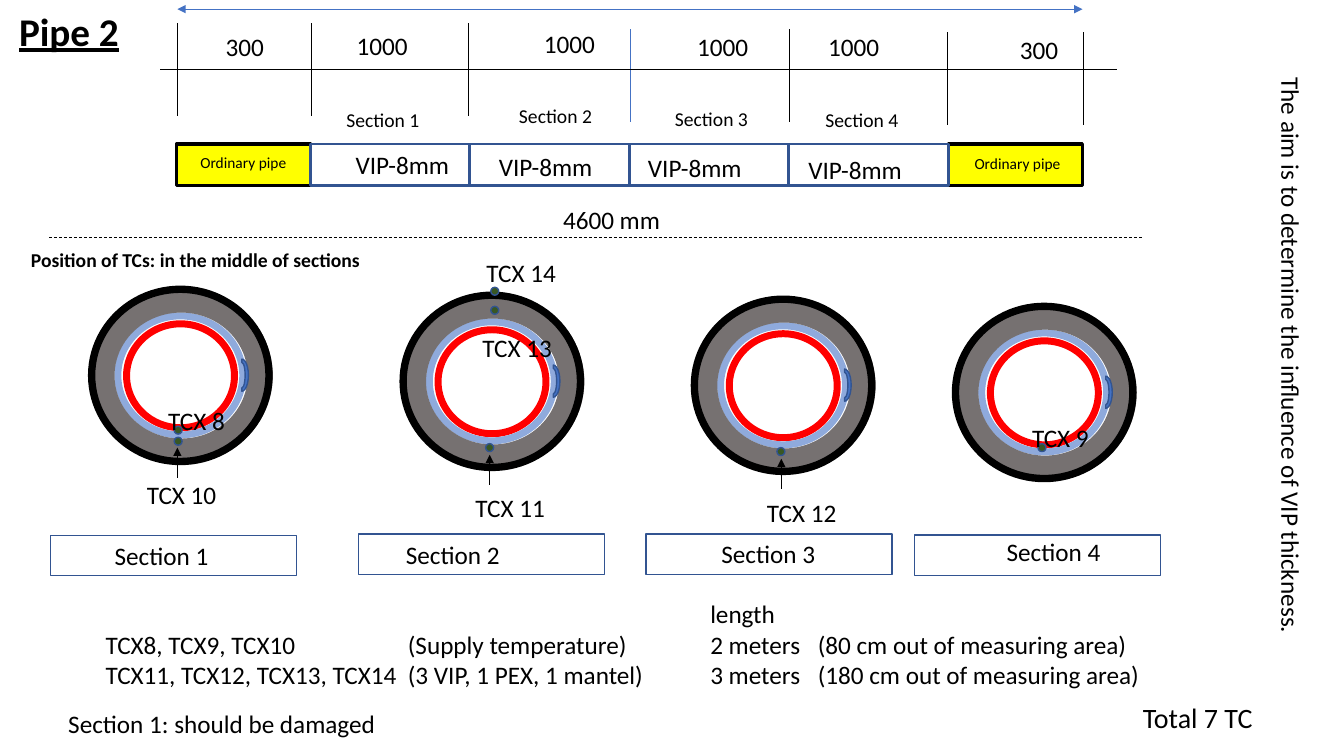
from dataclasses import dataclass, field
from typing import Any, NamedTuple, Optional

from lxml.etree import SubElement
from pptx import Presentation
from pptx.dml.color import RGBColor
from pptx.enum.dml import MSO_LINE
from pptx.enum.shapes import MSO_CONNECTOR, MSO_SHAPE
from pptx.enum.text import MSO_AUTO_SIZE
from pptx.oxml.ns import qn
from pptx.util import Cm, Pt


@dataclass(frozen=True)
class Theme:
    font: str = "Calibri"
    black: str = "000000"
    blue: str = "4472C4"
    navy: str = "325491"
    yellow: str = "FFFF00"
    green: str = "385723"
    red: str = "FF0000"
    pale_blue: str = "8FAADC"
    grey: str = "767171"
    title: int = 28
    total: int = 20
    body: int = 18
    small: int = 14
    tiny: int = 11


THEME = Theme()


class Label(NamedTuple):
    text: str
    left: float
    top: float
    width: float
    size: int = THEME.body
    format: dict[str, Any] = {}
    rotation: int = 0


class Figure(NamedTuple):
    left: float
    top: float
    width: float
    height: float
    line: str
    weight: float
    fill: Optional[str] = None
    kind: MSO_SHAPE = MSO_SHAPE.RECTANGLE
    rotation: int = 0


class Stroke(NamedTuple):
    start: tuple[float, float]
    end: tuple[float, float]
    color: str = THEME.black
    heads: tuple[str, ...] = ()
    dashed: bool = False


class Note(NamedTuple):
    text: str
    stops: tuple[float, ...]


@dataclass(frozen=True)
class PipeSection:
    name: str
    left: float
    top: float
    frame: tuple[float, float]
    caption: tuple[float, float]
    probes: list[tuple[float, float]]
    labels: list[Label]
    pointers: list[tuple[float, float]] = field(default_factory=list)


RINGS = [
    Figure(0.88, 0.87, 2.72, 2.62, THEME.red, 5),
    Figure(0.66, 0.67, 3.15, 3.0, THEME.pale_blue, 5),
    Figure(0.26, 0.27, 3.99, 3.81, THEME.grey, 18),
    Figure(0, 0, 4.47, 4.34, THEME.black, 5.25),
]

SECTIONS = [
    PipeSection("Section 1", 2.31, 7.29, (1.27, 13.49), (2.64, 13.49),
                [(4.39, 10.74), (4.39, 11.02)],
                [Label("TCX 8", 3.99, 10.08, 1.96), Label("TCX 10", 3.45, 11.94, 2.29)],
                [(4.47, 12.04)]),
    PipeSection("Section 2", 10.16, 7.44, (9.04, 13.46), (9.98, 13.46),
                [(12.24, 11.18), (12.37, 7.72), (12.37, 7.24)],
                [Label("TCX 11", 11.73, 12.29, 2.29), Label("TCX 14", 12.01, 6.35, 2.29),
                 Label("TCX 13", 11.91, 8.26, 2.29)],
                [(12.34, 12.22)]),
    PipeSection("Section 3", 17.5, 7.54, (16.28, 13.46), (17.93, 13.44),
                [(19.58, 11.28)], [Label("TCX 12", 19.08, 12.4, 2.29)], [(19.69, 12.32)]),
    PipeSection("Section 4", 24.08, 7.72, (23.04, 13.48), (25.12, 13.39),
                [(26.16, 11.18)], [Label("TCX 9", 25.76, 10.52, 1.96)]),
]

SEGMENTS = [
    Figure(left, 3.63, 3.38, 1.04, THEME.black, 2.25, THEME.yellow) for left in (4.45, 23.9)
] + [
    Figure(7.82 + 4.02 * index, 3.63, 4.02, 1.04, THEME.navy, 2) for index in range(4)
]

TICKS = [(4.47, 0.58), (7.85, 0.58), (11.81, 0.58), (15.88, 0.74),
         (19.89, 0.74), (23.88, 0.81), (27.31, 0.81)]
TICK_LENGTH = 2.34
BLUE_TICK = 3

STROKES = [
    Stroke((x, top), (x, top + TICK_LENGTH), THEME.blue if index == BLUE_TICK else THEME.black)
    for index, (x, top) in enumerate(TICKS)
] + [
    Stroke((4.04, 1.75), (28.14, 1.75)),
    Stroke((4.47, 0.23), (27.28, 0.23), THEME.blue, ("headEnd", "tailEnd")),
    Stroke((1.24, 5.97), (28.8, 5.97), dashed=True),
]

LABELS = [
    Label("Pipe 2", 0.23, 0.05, 3.05, THEME.title, {"bold": True, "underline": True}),
    Label("Position of TCs: in the middle of sections", 0.53, 6.12, 8.86, THEME.small,
          {"bold": True}),
    Label("4600 mm", 13.94, 5.03, 2.97),
    Label("The aim is to determine the influence of VIP thickness.", 25.2, 8.53, 14.68,
          rotation=90),
    Label("Section 1: should be damaged", 1.47, 17.73, 8.36),
    Label("Total 7 TC", 28.55, 17.53, 3.3, THEME.total),
]
LABELS += [Label("300", left, top, 1.5) for left, top in [(5.44, 0.66), (25.45, 0.74)]]
LABELS += [Label("1000", left, top, 1.8)
           for left, top in [(8.74, 0.63), (13.46, 0.58), (17.32, 0.66), (20.62, 0.66)]]
LABELS += [Label("VIP-8mm", left, top, 2.92)
           for left, top in [(8.71, 3.63), (12.32, 3.68), (16.08, 3.71), (20.12, 3.76)]]
LABELS += [Label("Ordinary pipe", left, top, 2.69, THEME.tiny)
           for left, top in [(4.8, 3.73), (24.31, 3.76)]]
LABELS += [Label(section.name, left, top, 2.36, THEME.small)
           for section, (left, top) in zip(
               SECTIONS, [(8.48, 2.59), (12.83, 2.49), (16.76, 2.57), (20.55, 2.59)])]

NOTE_STOPS = (7.62, 15.24, 17.95)
NOTES = [
    Note("\tlength", NOTE_STOPS[1:2]),
    Note("TCX8, TCX9, TCX10\t(Supply temperature)\t2 meters\t(80 cm out of measuring area)",
         NOTE_STOPS),
    Note("TCX11, TCX12, TCX13, TCX14\t(3 VIP, 1 PEX, 1 mantel)\t3 meters\t"
         "(180 cm out of measuring area)", NOTE_STOPS),
]


def write(para: Any, text: str, size: int, **extra: Any) -> None:
    span = para.add_run()
    span.text = text
    for name, value in {"name": THEME.font, "size": Pt(size), **extra}.items():
        setattr(span.font, name, value)
    span.font.color.rgb = RGBColor.from_string(THEME.black)


def draw_label(page: Any, label: Label) -> None:
    height = 0.25 + 0.0425 * label.size
    box = page.shapes.add_textbox(Cm(label.left), Cm(label.top), Cm(label.width), Cm(height))
    box.rotation = label.rotation
    for name, value in {"word_wrap": False, "auto_size": MSO_AUTO_SIZE.SHAPE_TO_FIT_TEXT}.items():
        setattr(box.text_frame, name, value)
    write(box.text_frame.paragraphs[0], label.text, label.size, **label.format)


def draw_figure(page: Any, figure: Figure) -> None:
    shape = page.shapes.add_shape(figure.kind, Cm(figure.left), Cm(figure.top),
                                  Cm(figure.width), Cm(figure.height))
    shape.shadow.inherit = False
    shape.rotation = figure.rotation
    shape.line.color.rgb = RGBColor.from_string(figure.line)
    shape.line.width = Pt(figure.weight)
    if figure.fill:
        shape.fill.solid()
        shape.fill.fore_color.rgb = RGBColor.from_string(figure.fill)
    else:
        shape.fill.background()


def draw_stroke(page: Any, stroke: Stroke) -> None:
    points = [Cm(value) for value in stroke.start + stroke.end]
    connector = page.shapes.add_connector(MSO_CONNECTOR.STRAIGHT, *points)
    connector.line.color.rgb = RGBColor.from_string(stroke.color)
    connector.line.width = Pt(0.5)
    if stroke.dashed:
        connector.line.dash_style = MSO_LINE.DASH
    properties = connector.line._get_or_add_ln()
    for head in stroke.heads:
        SubElement(properties, qn(f"a:{head}"), type="triangle")
    SubElement(connector._element.spPr, qn("a:effectLst"))


def draw_section(page: Any, section: PipeSection) -> None:
    draw_figure(page, Figure(*section.frame, 6.2, 1.02, THEME.navy, 1))
    draw_label(page, Label(section.name, *section.caption, 2.92))
    for ring in RINGS:
        draw_figure(page, ring._replace(left=section.left + ring.left, top=section.top + ring.top,
                                        kind=MSO_SHAPE.OVAL))
    draw_figure(page, Figure(section.left + 3.38, section.top + 2, 0.81, 0.33, THEME.navy, 1,
                             THEME.blue, MSO_SHAPE.BLOCK_ARC, 90))
    for left, top in section.probes:
        draw_figure(page, Figure(left, top, 0.2, 0.2, THEME.navy, 1, THEME.green, MSO_SHAPE.OVAL))
    for x, y in section.pointers:
        draw_stroke(page, Stroke((x, y), (x, y - 0.76), heads=("tailEnd",)))
    for label in section.labels:
        draw_label(page, label)


def draw_notes(page: Any, notes: list[Note]) -> None:
    box = page.shapes.add_textbox(Cm(2.41), Cm(14.96), Cm(26.82), Cm(2.57))
    box.text_frame.word_wrap = True
    for index, note in enumerate(notes):
        para = box.text_frame.add_paragraph() if index else box.text_frame.paragraphs[0]
        stops = SubElement(para._p.get_or_add_pPr(), qn("a:tabLst"))
        for stop in note.stops:
            SubElement(stops, qn("a:tab"), pos=str(Cm(stop)), algn="l")
        write(para, note.text, THEME.body)


def main() -> None:
    deck = Presentation()
    for name, value in {"slide_width": Cm(33.87), "slide_height": Cm(19.05)}.items():
        setattr(deck, name, value)
    page = deck.slides.add_slide(deck.slide_layouts[6])
    for section in SECTIONS:
        draw_section(page, section)
    for segment in SEGMENTS:
        draw_figure(page, segment)
    for stroke in STROKES:
        draw_stroke(page, stroke)
    for label in LABELS:
        draw_label(page, label)
    draw_notes(page, NOTES)
    deck.save("out.pptx")


if __name__ == "__main__":
    main()
